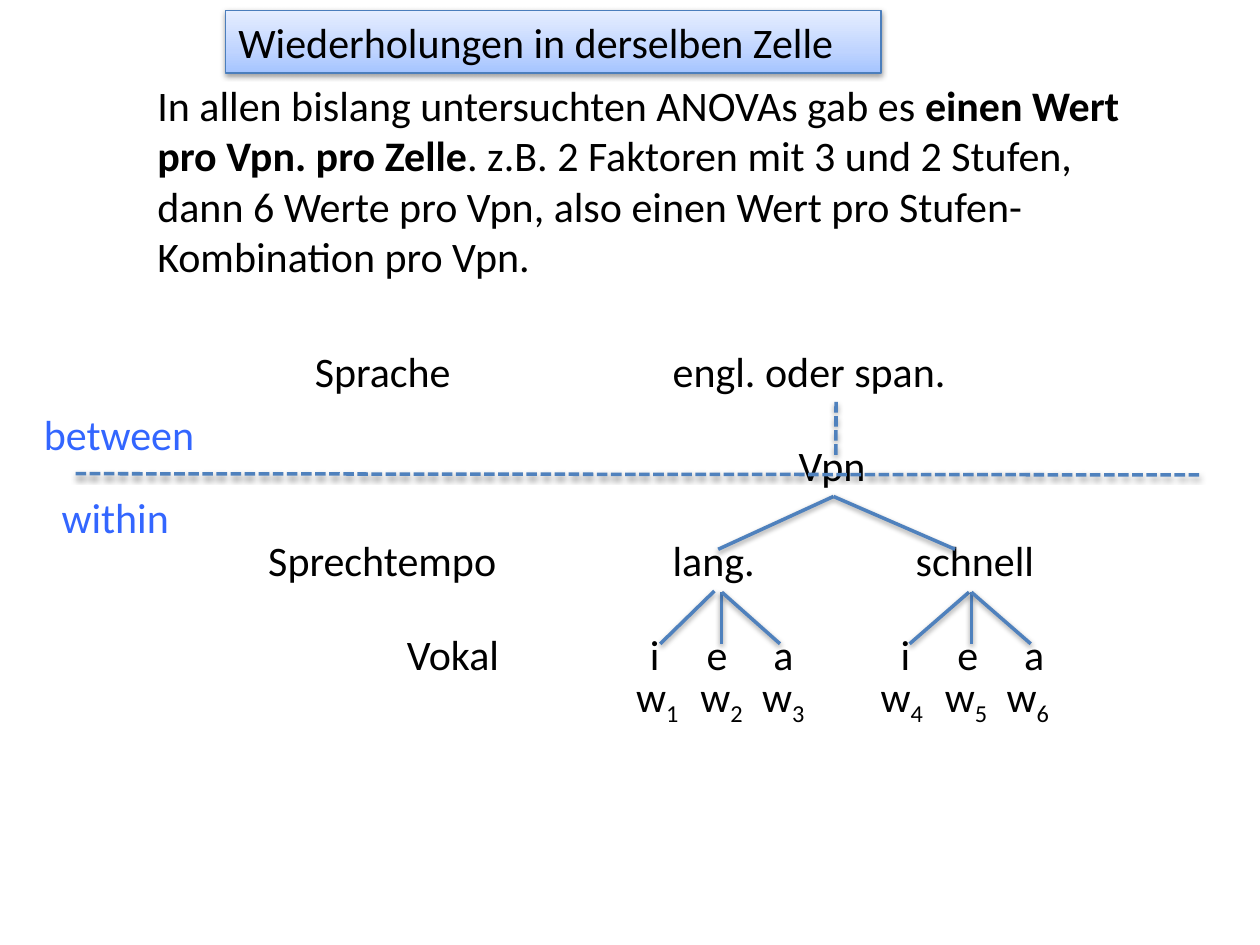
from copy import deepcopy

from lxml.etree import SubElement
from pptx import Presentation
from pptx.dml.color import RGBColor
from pptx.enum.dml import MSO_LINE
from pptx.enum.shapes import MSO_CONNECTOR
from pptx.enum.text import MSO_ANCHOR, MSO_AUTO_SIZE as AutoSize, PP_ALIGN
from pptx.oxml.ns import qn
from pptx.util import Pt

THEME = {
    "font": "Calibri", "size": 24,
    "text": "000000", "level": "3366FF", "line": "4F81BD", "edge": "4B7EBC",
    "gradient": [(0, "A4C4FF"), (0.35, "BFD4FF"), (1, "E6EEFF")],
}

# Content
TITLE = "Wiederholungen in derselben Zelle"
INTRO = [
    ("In allen bislang untersuchten ANOVAs gab es ", ""),
    ("einen Wert pro Vpn. pro Zelle", "bold"),
    (". z.B. 2 Faktoren mit 3 und 2 Stufen, dann 6 Werte pro Vpn, "
     "also einen Wert pro Stufen-Kombination pro Vpn.", ""),
]
# Tree labels: text, row, left, width
LABELS = [
    ("Sprache", 0, 172.8, 93.6), ("engl. oder span.", 0, 377.3, 200.9),
    ("Vpn", 1, 449.3, 54),
    ("Sprechtempo", 2, 146.2, 146.9), ("lang.", 2, 377.3, 61.9),
    ("schnell", 2, 516.2, 82.8),
    ("Vokal", 3, 225.4, 69.1),
]
LEVELS = [("between", 18, 229.7, 101.5), ("within", 28.1, 277.2, 77.8)]
# Vowels under each tempo: text, left, width
VOWELS = [("i", 364.3, 20.2), ("e", 396.7, 26.6), ("a", 434.9, 25.9)]
VALUE_LEFTS = [356.4, 393.1, 428.4]
VOWEL_SHIFT, VALUE_SHIFT = 143.3, 139.7

# Layout
ROW_TOP, ROW_STEP, BOX_HEIGHT = 193.7, 54, 36
VALUE_TOP = 379.5
FAN_TOP, FAN_BOTTOM = 338.4, 367.9
# Lines: start (a label's bottom centre, or a point), end, dashed
LINES = [
    ("engl. oder span.", (477.7, 259.9), True),
    ("Vpn", (410.4, 313.9), False),
    ("Vpn", (545.8, 313.9), False),
    ("lang.", (377.3, FAN_BOTTOM), False),
    ((43.2, 270.7), (685.4, 271.4), True),
]
# Remaining fan strokes: start x, end x
FANS = [(412.2, 412.2), (412.5, 445.7), (553.7, 519.8), (555.1, 555.1), (555.1, 589)]
LINES += [((x1, FAN_TOP), (x2, FAN_BOTTOM), False) for x1, x2 in FANS]


def add_shadow(shape):
    effects = SubElement(shape._element.spPr, qn("a:effectLst"))
    shadow = SubElement(effects, qn("a:outerShdw"), blurRad="40000",
                        dist="20000", dir="5400000", rotWithShape="0")
    color = SubElement(shadow, qn("a:srgbClr"), val="000000")
    SubElement(color, qn("a:alpha"), val="38000")


def write(box, spans, color=THEME["text"], wrap=False, fit=AutoSize.SHAPE_TO_FIT_TEXT):
    """Fill a box with (text, style) spans; style is '', 'bold' or 'sub'."""
    frame = box.text_frame
    frame.word_wrap = wrap
    frame.auto_size = fit
    frame.vertical_anchor = MSO_ANCHOR.TOP
    para = frame.paragraphs[0]
    para.alignment = PP_ALIGN.LEFT
    for text, style in spans:
        span = para.add_run()
        span.text = text
        span.font.name = THEME["font"]
        span.font.size = Pt(THEME["size"])
        span.font.bold = style == "bold"
        span.font.color.rgb = RGBColor.from_string(color)
        if style == "sub":
            span.font._element.set("baseline", "-25000")


def add_text(page, spans, left, top, width, height=BOX_HEIGHT, **look):
    box = page.shapes.add_textbox(Pt(left), Pt(top), Pt(width), Pt(height))
    write(box, spans, **look)
    return box


def add_line(page, start, end, dashed, boxes):
    joined = boxes.get(start)
    x, y = end if joined else start
    line = page.shapes.add_connector(
        MSO_CONNECTOR.STRAIGHT, Pt(x), Pt(y), Pt(end[0]), Pt(end[1]))
    if joined:
        line.begin_connect(joined, 2)
    line.line.color.rgb = RGBColor.from_string(THEME["line"])
    line.line.width = Pt(2)
    if dashed:
        line.line.dash_style = MSO_LINE.SQUARE_DOT
    add_shadow(line)


def format_title(title):
    title.left, title.top, title.width, title.height = map(Pt, (129, 5.8, 374.4, 36))
    # A fixed size keeps the title clear of the introduction
    write(title, [(TITLE, "")], wrap=True, fit=AutoSize.NONE)
    title.fill.gradient()
    title.fill.gradient_angle = 90
    first = title._element.spPr.find(".//" + qn("a:gs"))
    first.addnext(deepcopy(first))
    for stop, (position, color) in zip(title.fill.gradient_stops, THEME["gradient"]):
        stop.position = position
        stop.color.rgb = RGBColor.from_string(color)
    title.line.color.rgb = RGBColor.from_string(THEME["edge"])
    title.line.width = Pt(0.75)
    add_shadow(title)


def main():
    deck = Presentation()
    deck.slide_width, deck.slide_height = Pt(720), Pt(540)
    page = deck.slides.add_slide(deck.slide_layouts[5])

    # Title and introduction
    format_title(page.shapes.title)
    add_text(page, INTRO, 82.8, 41.8, 565.2, 123.8, wrap=True)

    # Factor names and tree labels
    boxes = {}
    for text, row, left, width in LABELS:
        boxes[text] = add_text(page, [(text, "")], left, ROW_TOP + row * ROW_STEP, width)

    # Vowels and their numbered values, once per tempo
    for branch in range(2):
        for index, (vowel, left, width) in enumerate(VOWELS):
            add_text(page, [(vowel, "")], left + branch * VOWEL_SHIFT,
                     ROW_TOP + 3 * ROW_STEP, width)
            number = branch * len(VOWELS) + index + 1
            add_text(page, [("w", ""), (str(number), "sub")],
                     VALUE_LEFTS[index] + branch * VALUE_SHIFT, VALUE_TOP, 40.3)

    # Between and within levels
    for text, left, top, width in LEVELS:
        add_text(page, [(text, "")], left, top, width, color=THEME["level"])

    # Tree branches and divider
    for start, end, dashed in LINES:
        add_line(page, start, end, dashed, boxes)

    deck.save("out.pptx")


if __name__ == "__main__":
    main()
